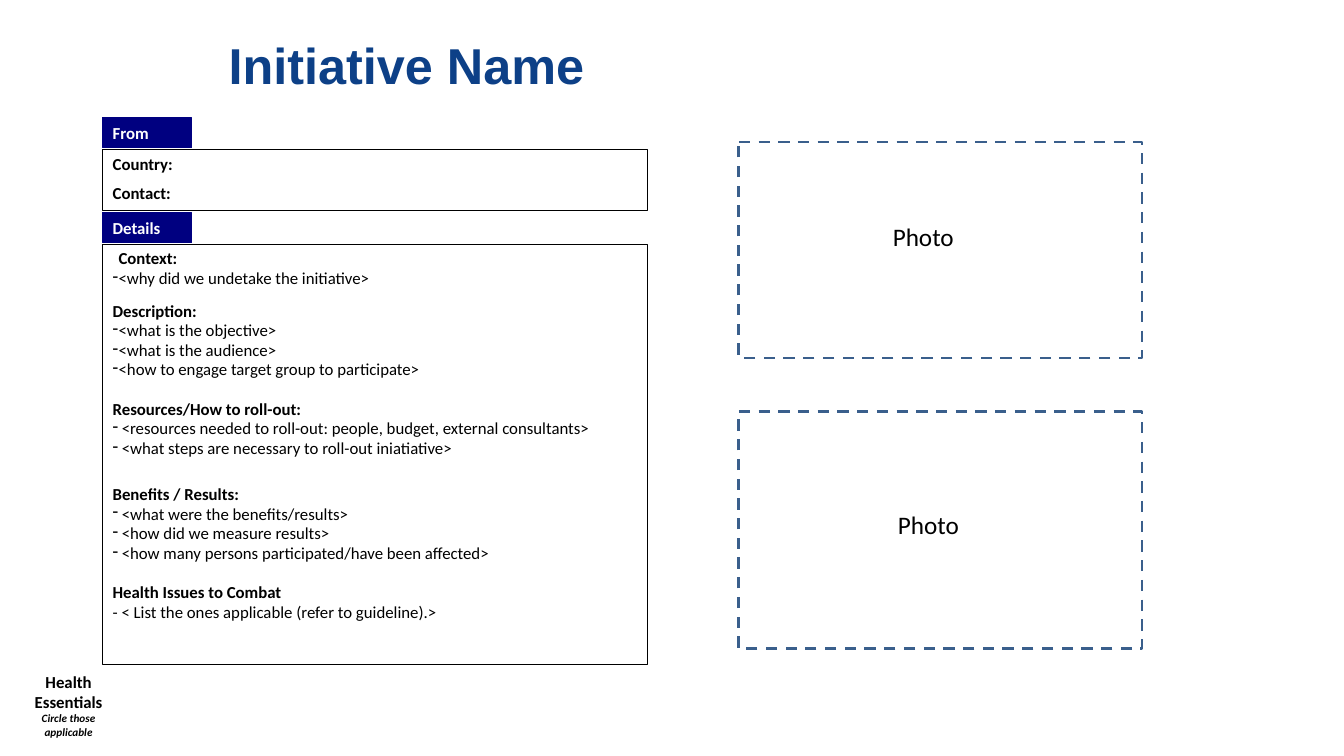
"""Build the initiative template slide."""
from lxml.etree import SubElement
from pptx import Presentation
from pptx.dml.color import RGBColor
from pptx.enum.dml import MSO_LINE
from pptx.enum.shapes import MSO_SHAPE
from pptx.enum.text import MSO_ANCHOR, MSO_AUTO_SIZE, PP_ALIGN
from pptx.oxml.ns import qn
from pptx.util import Cm, Pt

BLACK = RGBColor(0x00, 0x00, 0x00)
WHITE = RGBColor(0xFF, 0xFF, 0xFF)
NAVY = RGBColor(0x00, 0x00, 0x80)
TITLE_BLUE = RGBColor(0x0D, 0x40, 0x87)
FRAME_BLUE = RGBColor(0x3A, 0x5F, 0x8C)

TITLE = "Initiative Name"
FIELDS = ["Country:", "Contact:"]
TABS = [("From", 2.97), ("Details", 5.36)]
# heading, heading indent, points before, bullet indent, lines
SECTIONS = [
    ("Context:", 0.15, 0, 0.15, ["<why did we undetake the initiative>"]),
    ("Description:", 0, 9.5, 0.15, [
        "<what is the objective>",
        "<what is the audience>",
        "<how to engage target group to participate>",
    ]),
    ("Resources/How to roll-out:", 0, 14.2, 0.23, [
        "<resources needed to roll-out: people, budget, external consultants>",
        "<what steps are necessary to roll-out iniatiative>",
    ]),
    ("Benefits / Results:", 0, 19, 0.23, [
        "<what were the benefits/results>",
        "<how did we measure results>",
        "<how many persons participated/have been affected>",
    ]),
    ("Health Issues to Combat", 0, 14.2, 0,
     ["- < List the ones applicable (refer to guideline).>"]),
]
FOOTER = [("Health Essentials", 12, False), ("Circle those applicable", 8, True)]
PHOTO_FRAMES = [(3.58, 5.44), (10.36, 5.99)]
PHOTO_LABELS = [(22.25, 5.46), (22.38, 12.7)]
PANEL_LEFT, PANEL_WIDTH = 2.59, 13.72


def add_box(slide, box, line, fill=None, weight=0.75, kind=MSO_SHAPE.RECTANGLE):
    """Add an outlined shape and return it."""
    shape = slide.shapes.add_shape(kind, *map(Cm, box))
    shape.shadow.inherit = False
    shape.line.color.rgb = line
    shape.line.width = Pt(weight)
    if fill is None:
        shape.fill.background()
    else:
        shape.fill.solid()
        shape.fill.fore_color.rgb = fill
    shape.text_frame.word_wrap = True
    shape.text_frame.vertical_anchor = MSO_ANCHOR.TOP
    return shape


def write(frame, text, size=12, bold=False, color=BLACK, align=PP_ALIGN.LEFT,
          before=0, indent=0, bullet=None, font="Calibri"):
    """Write the next paragraph of a text frame and return it."""
    paragraph = frame.paragraphs[0] if not frame.text else frame.add_paragraph()
    paragraph.text = text
    paragraph.alignment = align
    if before:
        paragraph.space_before = Pt(before)
    if indent:
        properties = paragraph._p.get_or_add_pPr()
        properties.set("marL", str(Cm(indent)))
        properties.set("indent", str(-Cm(indent) if bullet else 0))
        if bullet:
            SubElement(properties, qn("a:buChar")).set("char", bullet)
    paragraph.font.name = font
    paragraph.font.size = Pt(size)
    paragraph.font.bold = bold
    paragraph.font.color.rgb = color
    return paragraph


def main():
    """Lay out the slide and save it."""
    presentation = Presentation()
    presentation.slide_width, presentation.slide_height = Cm(33.87), Cm(19.05)
    slide = presentation.slides.add_slide(presentation.slide_layouts[5])

    title = slide.shapes.title
    title.left, title.top, title.width, title.height = map(Cm, (5.51, 0.64, 20.75, 1.98))
    title.text_frame.vertical_anchor = MSO_ANCHOR.MIDDLE
    title.text_frame.auto_size = MSO_AUTO_SIZE.NONE
    write(title.text_frame, TITLE, 36, True, TITLE_BLUE, font="Arial")

    footer = slide.shapes.add_textbox(*map(Cm, (0.23, 16.79, 3, 1.96))).text_frame
    footer.word_wrap = True
    for text, size, italic in FOOTER:
        write(footer, text, size, True, align=PP_ALIGN.CENTER).font.italic = italic

    fields = add_box(slide, (PANEL_LEFT, 3.76, PANEL_WIDTH, 1.55), BLACK).text_frame
    for index, text in enumerate(FIELDS):
        write(fields, text, bold=True, before=6 * index)

    details = add_box(slide, (PANEL_LEFT, 6.15, PANEL_WIDTH, 10.59), BLACK).text_frame
    for heading, heading_indent, before, indent, lines in SECTIONS:
        write(details, heading, bold=True, before=before, indent=heading_indent)
        for text in lines:
            write(details, text, indent=indent, bullet="-")
    for paragraph in details.paragraphs:
        paragraph.line_spacing = 0.97

    for text, top in TABS:
        tab = add_box(slide, (PANEL_LEFT, top, 2.24, 0.76), NAVY, NAVY)
        write(tab.text_frame, text, bold=True, color=WHITE)

    for top, height in PHOTO_FRAMES:
        frame = add_box(slide, (18.62, top, 10.16, height), FRAME_BLUE, weight=2,
                        kind=MSO_SHAPE.FLOWCHART_PROCESS)
        frame.line.dash_style = MSO_LINE.DASH
    for left, top in PHOTO_LABELS:
        label = slide.shapes.add_textbox(*map(Cm, (left, top, 2.06, 1.02)))
        label.text_frame.word_wrap = False
        write(label.text_frame, "Photo", 18)

    presentation.save("out.pptx")


if __name__ == "__main__":
    main()
